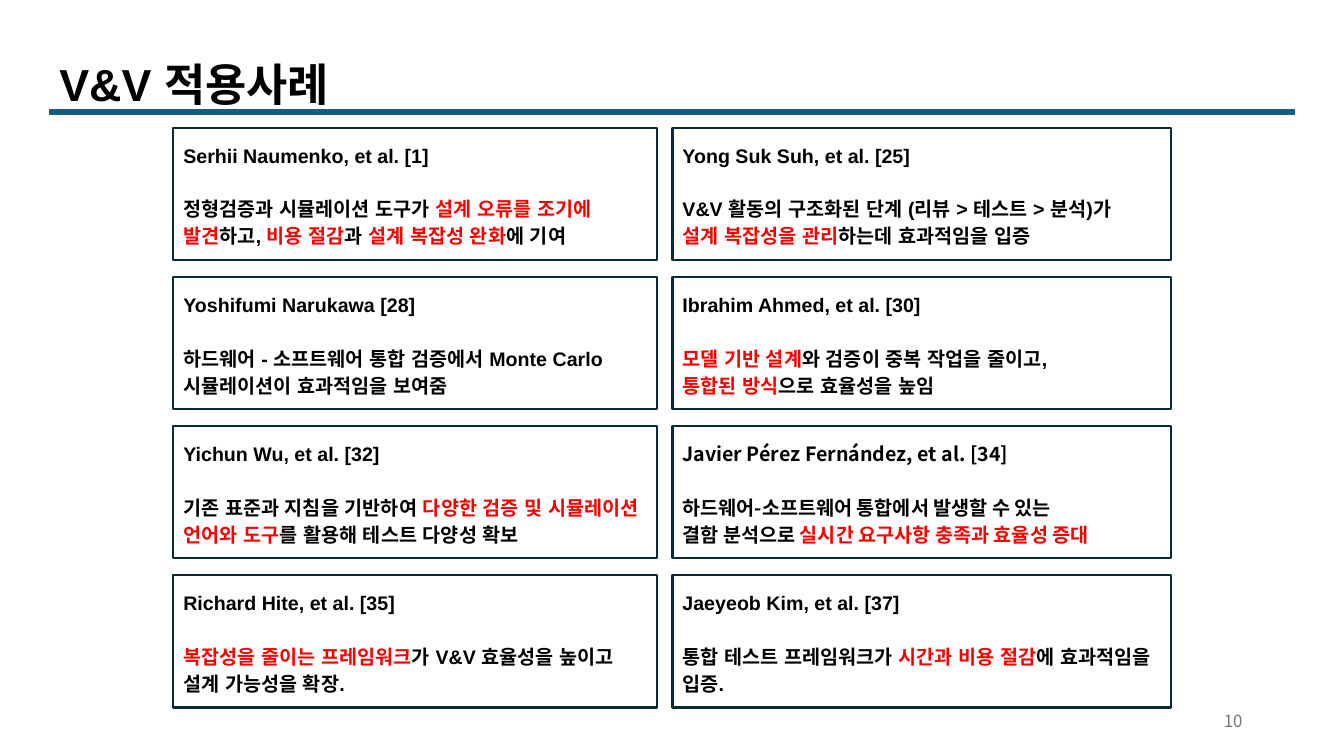
from lxml.etree import SubElement
from pptx import Presentation
from pptx.dml.color import RGBColor
from pptx.enum.shapes import MSO_CONNECTOR, MSO_SHAPE
from pptx.enum.text import MSO_ANCHOR as Anchor, PP_ALIGN as Align
from pptx.oxml.ns import qn
from pptx.util import Inches, Pt

COLORS = {"ink": "000000", "accent": "FF0000", "rule": "156082",
          "border": "092A39", "paper": "FFFFFF", "muted": "797979"}
LATIN, KOREAN = "Arial", "Noto Sans CJK KR"

LEFT_CASES = [
    ("Serhii Naumenko, et al. [1]",
     "정형검증과 시뮬레이션 도구가 |설계 오류를 조기에 발견|하고, |비용 절감|과 |설계 복잡성 완화|에 기여", LATIN),
    ("Yoshifumi Narukawa [28]",
     "하드웨어 - 소프트웨어 통합 검증에서 Monte Carlo 시뮬레이션이 효과적임을 보여줌", LATIN),
    ("Yichun Wu, et al. [32]",
     "기존 표준과 지침을 기반하여 |다양한 검증 및 시뮬레이션 언어와 도구|를 활용해 테스트 다양성 확보", LATIN),
    ("Richard Hite, et al. [35]",
     "|복잡성을 줄이는 프레임워크|가 V&V 효율성을 높이고 설계 가능성을 확장.", LATIN),
]
RIGHT_CASES = [
    ("Yong Suk Suh, et al. [25]",
     "V&V 활동의 구조화된 단계 (리뷰 > 테스트 > 분석)가\n|설계 복잡성을 관리|하는데 효과적임을 입증", LATIN),
    ("Ibrahim Ahmed, et al. [30]",
     "|모델 기반 설계|와 검증이 중복 작업을 줄이고,\n|통합된 방식|으로 효율성을 높임", LATIN),
    ("Javier Pérez Fernández, et al. [34]",
     "하드웨어-소프트웨어 통합에서 발생할 수 있는\n결함 분석으로 |실시간 요구사항 충족과 효율성 증대", KOREAN),
    ("Jaeyeob Kim, et al. [37]",
     "통합 테스트 프레임워크가 |시간과 비용 절감|에 효과적임을 입증.", LATIN),
]


class CaseSlide:
    """Draws on one slide, with lengths in percent of its width and height."""

    def __init__(self, deck):
        self.width, self.height = deck.slide_width, deck.slide_height
        self.shapes = deck.slides.add_slide(deck.slide_layouts[6]).shapes

    def place(self, *shares):
        return [round(share * side / 100)
                for share, side in zip(shares, (self.width, self.height) * 2)]

    def color(self, name):
        return RGBColor.from_string(COLORS[name])

    def add_words(self, paragraph, words, size, font, color="ink", bold=True):
        for index, part in enumerate(words.split("|")):
            for row, piece in enumerate(part.split("\n")):
                if row:
                    paragraph.add_line_break()
                if not piece:
                    continue
                run = paragraph.add_run()
                run.text = piece
                run.font.size, run.font.name, run.font.bold = Pt(size), font, bold
                run.font.color.rgb = self.color("accent" if index % 2 else color)
                SubElement(run.font._element, qn("a:ea"), typeface=font)

    def rule(self, left, right, y):
        line = self.shapes.add_connector(
            MSO_CONNECTOR.STRAIGHT, *self.place(left, y, right, y))
        line.line.color.rgb = self.color("rule")
        line.line.width = Pt(4.5)
        SubElement(line._element.spPr, qn("a:effectLst"))

    def label(self, area, words, size, font, color="ink", bold=True,
              align=Align.LEFT, anchor=Anchor.TOP, spacing=1.0, wrap=True):
        frame = self.shapes.add_textbox(*self.place(*area)).text_frame
        frame.word_wrap, frame.vertical_anchor = wrap, anchor
        paragraph = frame.paragraphs[0]
        paragraph.alignment, paragraph.line_spacing = align, spacing
        self.add_words(paragraph, words, size, font, color, bold)

    def card(self, area, authors, finding, font):
        box = self.shapes.add_shape(MSO_SHAPE.RECTANGLE, *self.place(*area))
        box.shadow.inherit = False
        box.fill.solid()
        box.fill.fore_color.rgb = self.color("paper")
        box.line.color.rgb = self.color("border")
        box.line.width = Pt(1.5)
        frame = box.text_frame
        frame.word_wrap, frame.vertical_anchor = True, Anchor.MIDDLE
        heading, body = frame.paragraphs[0], frame.add_paragraph()
        body.space_before = Pt(19)
        for paragraph, words in ((heading, authors), (body, finding)):
            paragraph.alignment, paragraph.line_spacing = Align.LEFT, 1.15
            self.add_words(paragraph, words, 14, font)


def main():
    deck = Presentation()
    deck.slide_width, deck.slide_height = Inches(13.33), Inches(7.5)
    page = CaseSlide(deck)
    page.rule(3.68, 96.32, 14.8)
    for left, width, cases in ((12.9, 36.01, LEFT_CASES), (50.04, 37.06, RIGHT_CASES)):
        for row, case in enumerate(cases):
            page.card((left, 16.93 + 19.73 * row, width, 17.47), *case)
    page.label((3.68, 5.73, 23.56, 8.8), "V&V 적용사례", 32, LATIN,
               spacing=1.15, wrap=False)
    page.label((70.67, 92.67, 22.51, 5.33), "10", 12, KOREAN, "muted", False,
               Align.RIGHT, Anchor.MIDDLE)
    deck.save("out.pptx")


if __name__ == "__main__":
    main()
